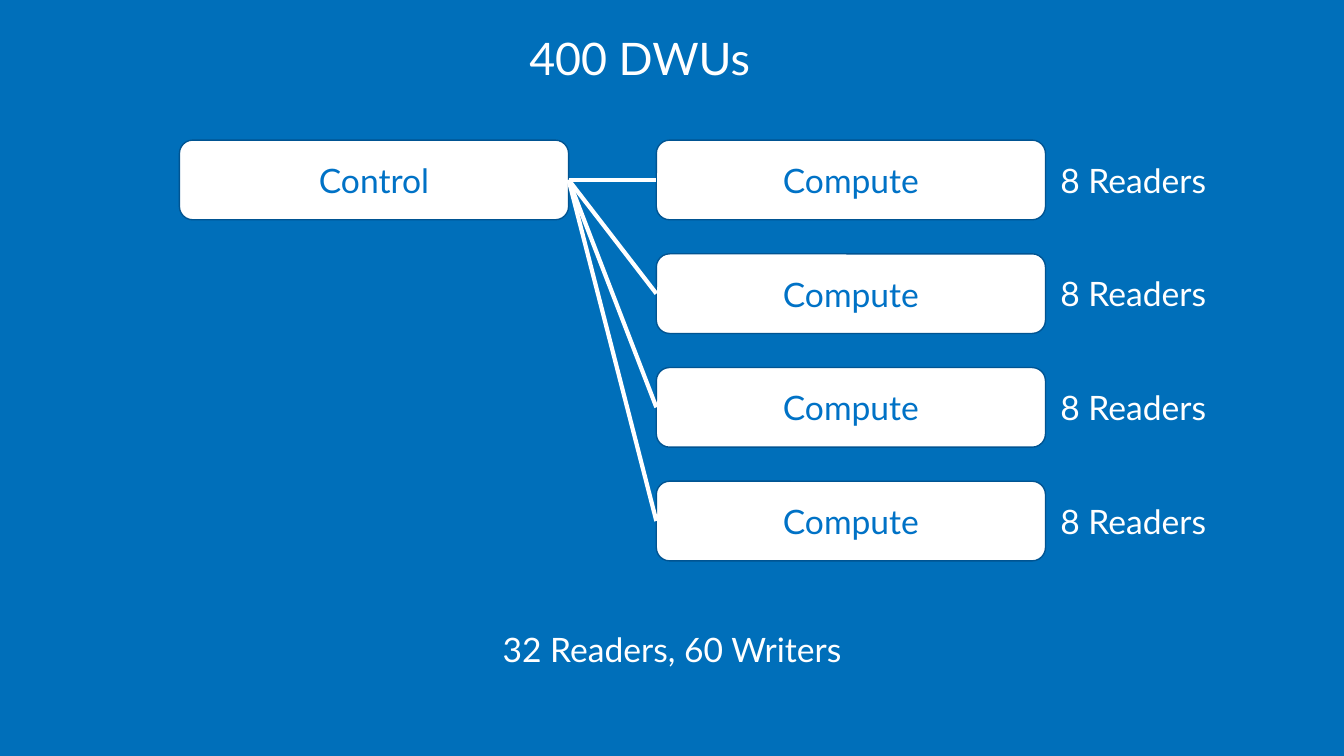
from lxml import etree
from pptx import Presentation
from pptx.dml.color import RGBColor
from pptx.enum.shapes import MSO_CONNECTOR as Connector, MSO_SHAPE as Preset
from pptx.enum.text import MSO_ANCHOR as Anchor, MSO_AUTO_SIZE as AutoSize, PP_ALIGN as Align
from pptx.oxml.ns import qn
from pptx.util import Inches, Pt

COLORS = {
    "background": "006FBA",
    "white": "FFFFFF",
    "node_text": "0072C6",
    "node_outline": "005492",
}
FONT = "Lato"
SLIDE_W, SLIDE_H = 13.33, 7.5
NODE_W, NODE_H = 3.86, 0.79
CONTROL_X, COMPUTE_X = 1.78, 6.51
READERS_X, READERS_W = 9.86, 2.76
LABEL_H = 0.5
FIRST_ROW, ROW_STEP = 1.39, 1.128
READERS_PER_NODE = ["8 Readers"] * 4


def color(name):
    return RGBColor.from_string(COLORS[name])


def row_top(row):
    return FIRST_ROW + row * ROW_STEP


def row_middle(row):
    return row_top(row) + NODE_H / 2


def write(frame, text, size, color_name):
    frame.word_wrap = True
    paragraph = frame.paragraphs[0]
    paragraph.alignment = Align.CENTER
    run = paragraph.add_run()
    run.text = text
    run.font.name = FONT
    run.font.size = Pt(size)
    run.font.color.rgb = color(color_name)


def add_node(slide, text, left, row):
    node = slide.shapes.add_shape(
        Preset.ROUNDED_RECTANGLE,
        Inches(left), Inches(row_top(row)), Inches(NODE_W), Inches(NODE_H))
    node.shadow.inherit = False
    node.fill.solid()
    node.fill.fore_color.rgb = color("white")
    node.line.color.rgb = color("node_outline")
    node.line.width = Pt(1)
    node.text_frame.vertical_anchor = Anchor.MIDDLE
    write(node.text_frame, text, 24, "node_text")
    return node


def add_label(slide, text, left, top, width, height=LABEL_H, size=24):
    label = slide.shapes.add_textbox(
        Inches(left), Inches(top), Inches(width), Inches(height))
    write(label.text_frame, text, size, "white")
    label.text_frame.auto_size = AutoSize.SHAPE_TO_FIT_TEXT


def add_link(slide, control, compute):
    """Join the right side of control to the left side of compute."""
    link = slide.shapes.add_connector(Connector.STRAIGHT, 0, 0, 0, 0)
    link.begin_connect(control, 3)
    link.end_connect(compute, 1)
    link.line.color.rgb = color("white")
    link.line.width = Pt(3)
    etree.SubElement(link._element.spPr, qn("a:effectLst"))


def main():
    deck = Presentation()
    deck.slide_width, deck.slide_height = Inches(SLIDE_W), Inches(SLIDE_H)
    slide = deck.slides.add_slide(deck.slide_layouts[6])
    slide.background.fill.solid()
    slide.background.fill.fore_color.rgb = color("background")

    add_label(slide, "400 DWUs", 3.44, 0.26, 5.81, height=0.64, size=32)
    control = add_node(slide, "Control", CONTROL_X, 0)
    for row, readers in enumerate(READERS_PER_NODE):
        compute = add_node(slide, "Compute", COMPUTE_X, row)
        add_link(slide, control, compute)
        add_label(slide, readers, READERS_X, row_middle(row) - LABEL_H / 2, READERS_W)
    add_label(slide, "32 Readers, 60 Writers", 0, 6.19, SLIDE_W)

    deck.save("out.pptx")


if __name__ == "__main__":
    main()
